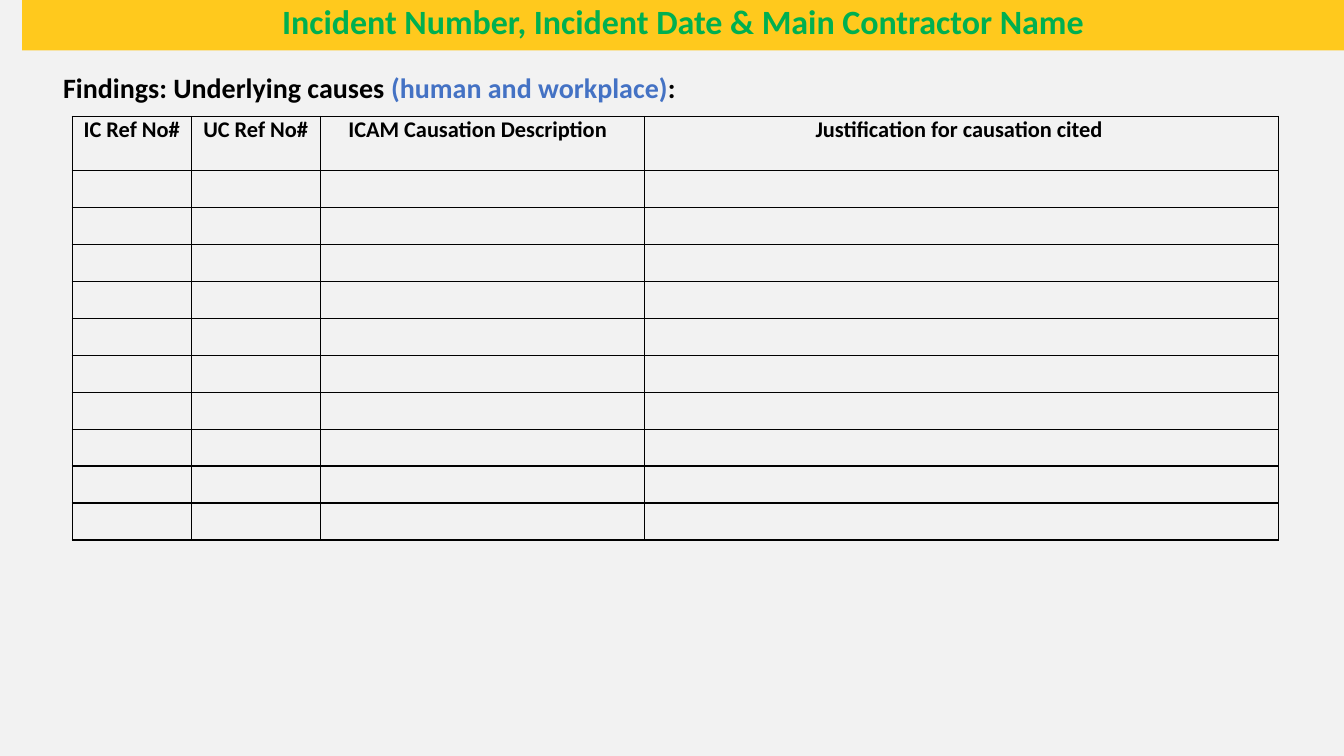
from pptx import Presentation
from pptx.dml.color import RGBColor
from pptx.enum.shapes import MSO_SHAPE as Shape
from pptx.enum.text import MSO_ANCHOR as Anchor, PP_ALIGN as Align
from pptx.oxml import parse_xml
from pptx.oxml.ns import nsdecls
from pptx.util import Pt

BLACK, GREEN, BLUE = "000000", "00B050", "4472C4"
YELLOW, PALE_GREY = "FFC91D", "F2F2F2"
COLUMN_WIDTHS = (85, 92.2, 231.8, 452.5)
HEADER_HEIGHT, ROW_HEIGHT, EMPTY_ROWS = 38.6, 26.4, 10
# Each heading with its right margin
HEADINGS = (
    ("IC Ref No#", 5),
    ("UC Ref No#", 5),
    ("ICAM Causation Description", 12),
    ("Justification for causation cited", 8.5),
)


def color(hex_code):
    return RGBColor.from_string(hex_code)


def apply(target, formats):
    for name, value in formats.items():
        setattr(target, name, value)


def add_span(para, text, size, hex_code):
    span = para.add_run()
    span.text = text
    apply(span.font, {"name": "Calibri", "size": Pt(size), "bold": True})
    span.font.color.rgb = color(hex_code)


def add_title_band(page, left, top, width, height):
    band = page.shapes.add_shape(Shape.RECTANGLE, Pt(left), Pt(top), Pt(width), Pt(height))
    band.shadow.inherit = False
    band.fill.solid()
    band.fill.fore_color.rgb = color(YELLOW)
    band.line.fill.background()
    apply(band.text_frame, {
        "vertical_anchor": Anchor.MIDDLE, "word_wrap": True,
        "margin_top": 0, "margin_bottom": Pt(6),
    })
    para = band.text_frame.paragraphs[0]
    para.alignment = Align.CENTER
    add_span(para, "Incident Number, Incident Date & Main Contractor Name", 24.3, GREEN)


def add_findings_heading(page, left, top, width, height):
    box = page.shapes.add_textbox(Pt(left), Pt(top), Pt(width), Pt(height))
    box.text_frame.word_wrap = False
    para = box.text_frame.paragraphs[0]
    for text, hex_code in (
        ("Findings: Underlying causes ", BLACK),
        ("(human and workplace)", BLUE),
        (":", BLACK),
    ):
        add_span(para, text, 20, hex_code)


def style_cell(cell):
    """Clear the cell's fill and draw a black line on all four sides."""
    apply(cell, {
        "margin_left": Pt(5), "margin_right": Pt(5),
        "margin_top": 0, "margin_bottom": 0,
    })
    properties = cell._tc.get_or_add_tcPr()
    for side in ("lnL", "lnR", "lnT", "lnB"):
        properties.append(parse_xml(
            f'<a:{side} {nsdecls("a")} w="{Pt(1)}"><a:solidFill>'
            f'<a:srgbClr val="{BLACK}"/></a:solidFill></a:{side}>'
        ))
    cell.fill.background()


def add_causes_table(page, left, top):
    height = HEADER_HEIGHT + EMPTY_ROWS * ROW_HEIGHT
    table = page.shapes.add_table(
        EMPTY_ROWS + 1, len(HEADINGS), Pt(left), Pt(top), Pt(sum(COLUMN_WIDTHS)), Pt(height)
    ).table
    apply(table, {"first_row": False, "horz_banding": False})
    for column, width in zip(table.columns, COLUMN_WIDTHS):
        column.width = Pt(width)
    for index, row in enumerate(table.rows):
        row.height = Pt(ROW_HEIGHT if index else HEADER_HEIGHT)
    for cell in table.iter_cells():
        style_cell(cell)
    for cell, (heading, margin) in zip(table.rows[0].cells, HEADINGS):
        cell.margin_right = Pt(margin)
        para = cell.text_frame.paragraphs[0]
        para.alignment = Align.CENTER
        add_span(para, heading, 16, BLACK)


def main():
    deck = Presentation()
    apply(deck, {"slide_width": Pt(960), "slide_height": Pt(540)})
    page = deck.slides.add_slide(deck.slide_layouts[6])
    page.background.fill.solid()
    page.background.fill.fore_color.rgb = color(PALE_GREY)
    add_title_band(page, 15.8, 0, 944.2, 36)
    add_findings_heading(page, 38, 46.8, 460, 31.5)
    add_causes_table(page, 51.6, 83.2)
    deck.save("out.pptx")


if __name__ == "__main__":
    main()
